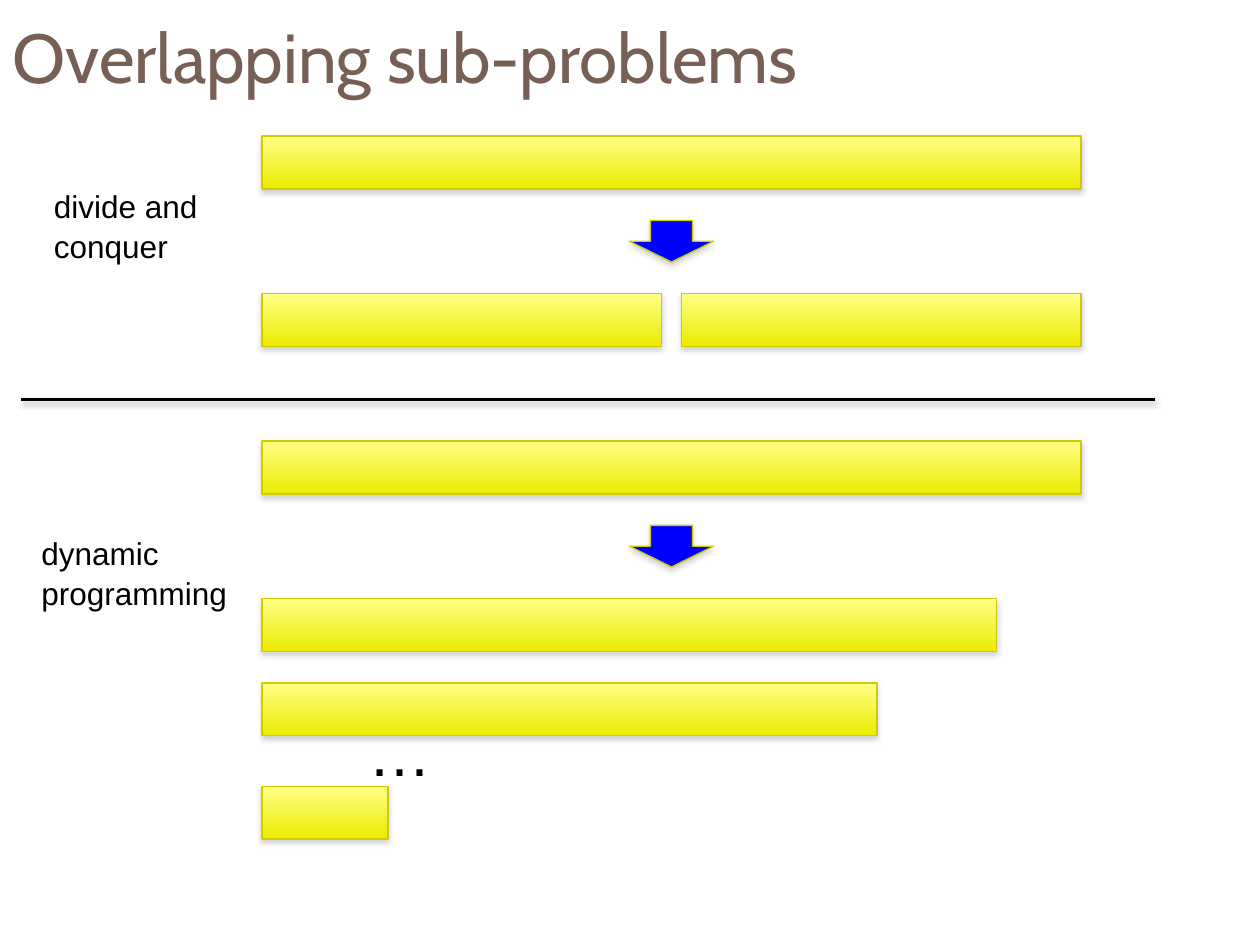
from lxml import etree
from pptx import Presentation
from pptx.dml.color import RGBColor
from pptx.enum import shapes as kinds, text as texts
from pptx.oxml import ns
from pptx.util import Inches, Pt

COLORS = {"title": "775F55", "ink": "000000", "bar_top": "FFFF85", "bar_bottom": "EBEB00",
          "edge": "CCCC00", "arrow": "0000FF", "shadow": "808080"}
BAR_HEIGHT = 0.42
BAR_WIDTH = 6.5
ARROW_WIDTH, ARROW_HEIGHT = 0.67, 0.33


def color(name):
    """Return the named colour."""
    return RGBColor.from_string(COLORS[name])


def cast_shadow(part, opacity=35, distance=1.8):
    """Give a shape or line a soft shadow straight below it."""
    effects = etree.SubElement(part._element.spPr, ns.qn("a:effectLst"))
    outer = etree.SubElement(effects, ns.qn("a:outerShdw"), blurRad=str(Pt(3.1)),
                             dist=str(Pt(distance)), dir="5400000", rotWithShape="0")
    tone = etree.SubElement(outer, ns.qn("a:srgbClr"), val=COLORS["shadow"])
    etree.SubElement(tone, ns.qn("a:alpha"), val=str(opacity * 1000))


def add_edged(slide, kind, left, top, width, height):
    """Add a preset shape with the thin olive edge and a shadow."""
    part = slide.shapes.add_shape(kind, Inches(left), Inches(top), Inches(width), Inches(height))
    part.line.color.rgb = color("edge")
    part.line.width = Pt(0.75)
    cast_shadow(part)
    return part


def add_bar(slide, left, top, width):
    """Add a yellow bar that stands for one problem."""
    bar = add_edged(slide, kinds.MSO_SHAPE.RECTANGLE, left, top, width, BAR_HEIGHT)
    bar.fill.gradient()
    bar.fill.gradient_angle = 270
    for stop, name in zip(bar.fill.gradient_stops, ("bar_top", "bar_bottom")):
        stop.color.rgb = color(name)


def add_label(slide, left, top, width, height, words, size, font="Arial", ink="ink",
              spacing=1.06, anchor=texts.MSO_ANCHOR.TOP):
    """Add unwrapped text in one font."""
    frame = slide.shapes.add_textbox(Inches(left), Inches(top), Inches(width),
                                     Inches(height)).text_frame
    frame.word_wrap = False
    frame.vertical_anchor = anchor
    frame.text = words
    for paragraph in frame.paragraphs:
        paragraph.line_spacing = spacing
        paragraph.font.name = font
        paragraph.font.size = Pt(size)
        paragraph.font.color.rgb = color(ink)


def add_problem(slide, left, top):
    """Add the whole problem and the arrow to its sub-problems."""
    add_bar(slide, left, top, BAR_WIDTH)
    arrow = add_edged(slide, kinds.MSO_SHAPE.DOWN_ARROW, left + (BAR_WIDTH - ARROW_WIDTH) / 2,
                      top + 0.67, ARROW_WIDTH, ARROW_HEIGHT)
    arrow.fill.solid()
    arrow.fill.fore_color.rgb = color("arrow")


def add_divide_and_conquer(slide, left, top):
    """Show a problem split into two separate halves."""
    add_problem(slide, left, top)
    half = 3.17
    for offset in (0, BAR_WIDTH - half):
        add_bar(slide, left + offset, top + 1.25, half)
    add_label(slide, left - 1.75, top + 0.34, 1.35, 0.71, "divide and\vconquer", 18)


def add_dynamic_programming(slide, left, top):
    """Show a problem reduced to ever smaller overlapping ones."""
    add_problem(slide, left, top)
    for offset, width in ((1.25, 5.83), (1.92, 4.88), (2.74, 1)):
        add_bar(slide, left, top + offset, width)
    add_label(slide, left + 0.75, top + 2.08, 0.71, 0.71, "…", 36)
    add_label(slide, left - 1.85, top + 0.67, 1.69, 0.71, "dynamic\nprogramming", 18)


def add_divider(slide, left, top, width):
    """Separate the two methods with a black line."""
    divider = slide.shapes.add_connector(kinds.MSO_CONNECTOR.STRAIGHT, Inches(left), Inches(top),
                                         Inches(left + width), Inches(top))
    divider.line.color.rgb = color("ink")
    divider.line.width = Pt(2)
    cast_shadow(divider, 38, 1.6)


def main():
    """Build and save the slide."""
    deck = Presentation()
    deck.slide_width, deck.slide_height = Inches(10), Inches(7.5)
    slide = deck.slides.add_slide(deck.slide_layouts[6])
    add_label(slide, 0, 0.13, 8.25, 0.62, "Overlapping sub-problems", 39.6, "Cabin", "title",
              1, texts.MSO_ANCHOR.MIDDLE)
    add_divide_and_conquer(slide, 2.08, 1.08)
    add_divider(slide, 0.17, 3.17, 9)
    add_dynamic_programming(slide, 2.08, 3.5)
    deck.save("out.pptx")


if __name__ == "__main__":
    main()
